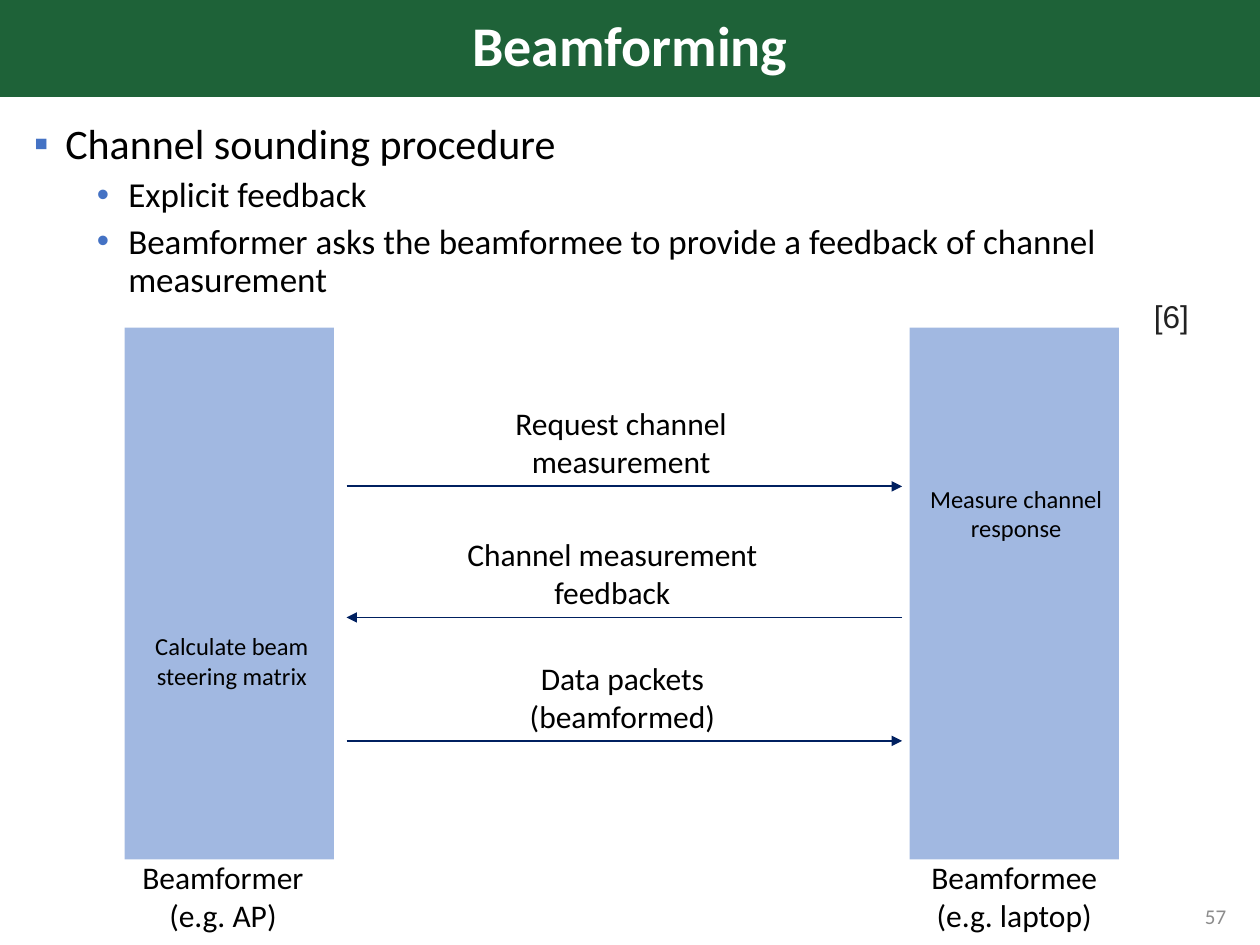
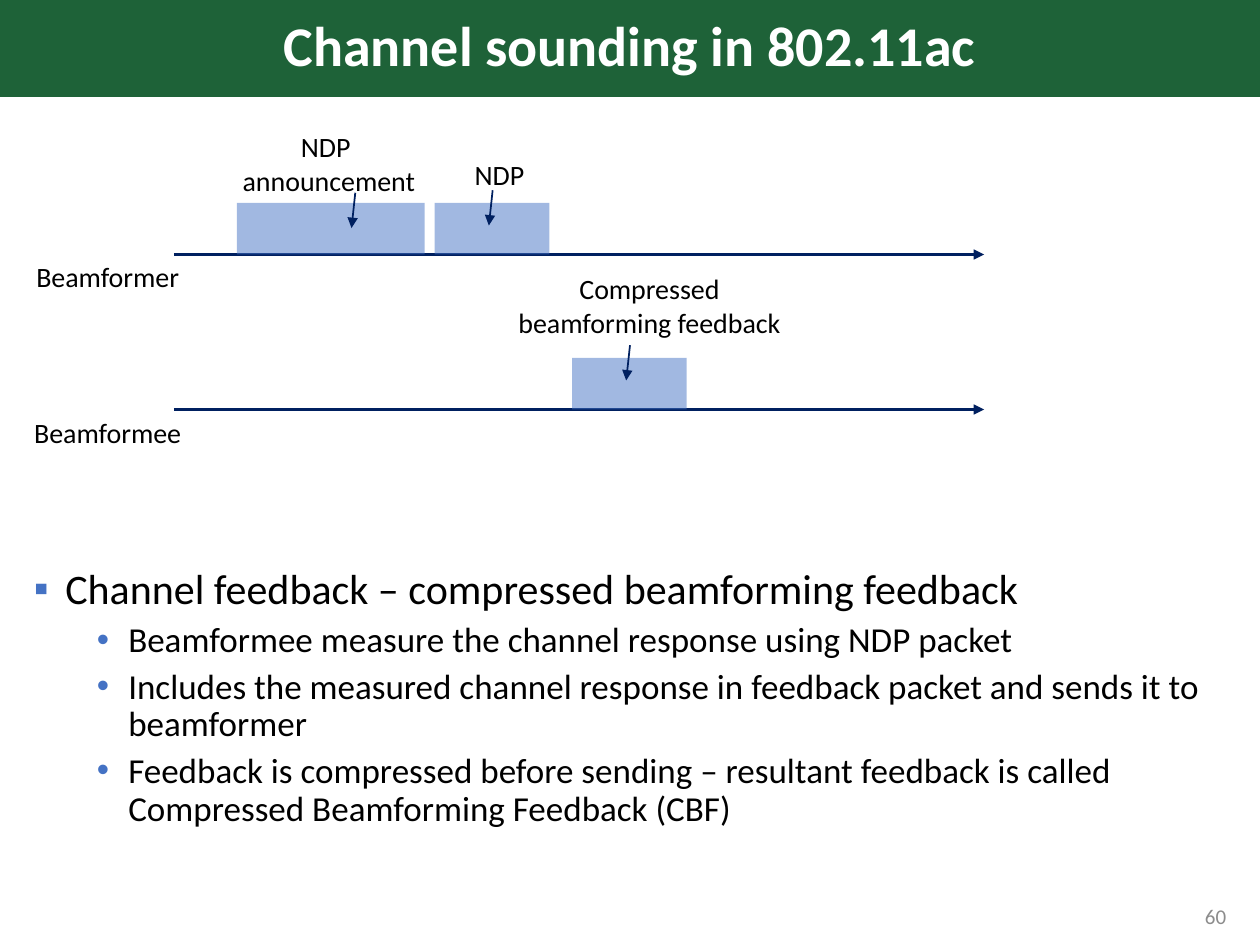
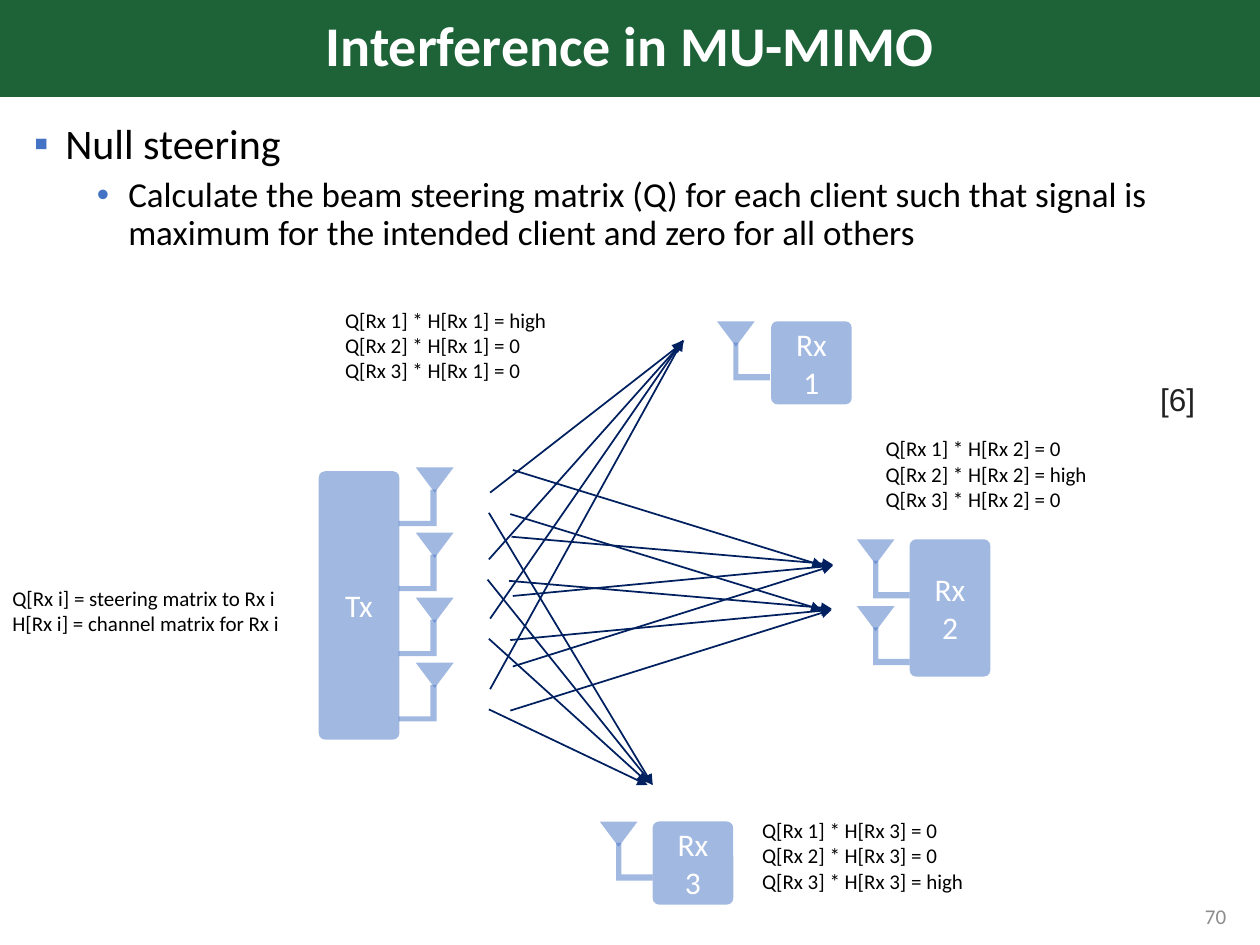
from lxml import etree
from pptx import Presentation
from pptx.dml.color import RGBColor
from pptx.enum.shapes import MSO_CONNECTOR, MSO_SHAPE
from pptx.enum.text import MSO_ANCHOR, PP_ALIGN
from pptx.oxml.ns import qn
from pptx.util import Inches, Pt

RECT = MSO_SHAPE.RECTANGLE
ROUND = MSO_SHAPE.ROUNDED_RECTANGLE
CORNER = MSO_SHAPE.CORNER
CONE = MSO_SHAPE.ISOSCELES_TRIANGLE
LINE = MSO_CONNECTOR.STRAIGHT
LEFT, CENTER, RIGHT = PP_ALIGN.LEFT, PP_ALIGN.CENTER, PP_ALIGN.RIGHT
TOP, MIDDLE = MSO_ANCHOR.TOP, MSO_ANCHOR.MIDDLE

GREEN, BLUE, NAVY = "1E6238", "4472C4", "002060"
BLACK, WHITE, GRAY, DARK = "000000", "FFFFFF", "8C8C8C", "222222"


def color(code):
    return RGBColor.from_string(code)


def add(parent, tag, **attrs):
    return etree.SubElement(parent, qn(tag), attrs)


def write(frame, text, size=18, ink=BLACK, font="Calibri", bold=False,
          align=CENTER, anchor=TOP, spacing=None):
    """Fill a text frame, one paragraph for each line of text."""
    frame.word_wrap = True
    frame.vertical_anchor = anchor
    for i, line in enumerate(text.split("\n")):
        para = frame.paragraphs[0] if i == 0 else frame.add_paragraph()
        para.alignment = align
        para.line_spacing = spacing
        run = para.add_run()
        run.text = line
        run.font.size = Pt(size)
        run.font.name = font
        run.font.bold = bold
        run.font.color.rgb = color(ink)


def bullet(para, mark, indent):
    props = para._p.get_or_add_pPr()
    props.set("marL", str(Inches(indent)))
    props.set("indent", str(Inches(-0.25)))
    add(add(props, "a:buClr"), "a:srgbClr", val=BLUE)
    add(props, "a:buFont", typeface="Arial")
    add(props, "a:buChar", char=mark)


class Deck:
    """Holds the shared style and the slide being built."""

    def __init__(self):
        self.prs = Presentation()
        self.prs.slide_width = Inches(10)
        self.prs.slide_height = Inches(7.5)
        self.slide = None

    def start(self, title, number):
        self.slide = self.prs.slides.add_slide(self.prs.slide_layouts[6])
        band = self.shape(RECT, 0, 0, 10, 0.77, fill=GREEN, alpha=None)
        write(band.text_frame, title, size=32, ink=WHITE, bold=True,
              anchor=MIDDLE, spacing=0.9)
        self.text(number, 7.58, 7.07, 2.25, 0.4, size=12, ink=GRAY,
                  align=RIGHT, anchor=MIDDLE)

    def shape(self, kind, x, y, w, h, fill=BLUE, alpha=50, adjust=(), turn=0):
        item = self.slide.shapes.add_shape(
            kind, Inches(x), Inches(y), Inches(w), Inches(h))
        item.shadow.inherit = False
        item.line.fill.background()
        item.fill.solid()
        item.fill.fore_color.rgb = color(fill)
        if alpha:
            tint = item._element.spPr.find(qn("a:solidFill"))[0]
            add(tint, "a:alpha", val=str(alpha * 1000))
        for i, value in enumerate(adjust):
            item.adjustments[i] = value
        item.rotation = turn
        return item

    def text(self, text, x, y, w, h, **style):
        box = self.slide.shapes.add_textbox(
            Inches(x), Inches(y), Inches(w), Inches(h))
        write(box.text_frame, text, **style)
        return box.text_frame

    def body(self, head, points, top=0.93):
        frame = self.text("\n".join([head, *points]), 0.17, top, 9.66,
                          7.34 - top, size=20, align=LEFT, spacing=0.9)
        first, *rest = frame.paragraphs
        first.space_before = Pt(10)
        first.runs[0].font.size = Pt(24)
        bullet(first, "▪", 0.25)
        for para in rest:
            para.level = 1
            para.space_before = Pt(5)
            bullet(para, "•", 0.75)

    def arrow(self, x1, y1, x2, y2, width=1):
        line = self.slide.shapes.add_connector(
            LINE, Inches(x1), Inches(y1), Inches(x2), Inches(y2))
        line.line.color.rgb = color(NAVY)
        line.line.width = Pt(width)
        add(line.line._get_or_add_ln(), "a:tailEnd", type="triangle")
        add(line._element.spPr, "a:effectLst")

    def cite(self, x, y):
        self.text("[6]", x, y, 0.55, 0.4, font="Arial", ink=DARK, align=LEFT)

    def device(self, label, x, y, h):
        box = self.shape(ROUND, x, y, 0.64, h, adjust=[0.08])
        write(box.text_frame, label, ink=WHITE, anchor=MIDDLE)

    def antenna(self, x, y, sends=False):
        """Draw a cone and its feed, which leads left on a sender."""
        side, turn = (-0.13, 270) if sends else (0.13, 0)
        self.shape(CORNER, x + side, y + 0.17, 0.29, 0.3,
                   adjust=[0.17, 0.14], turn=turn)
        self.shape(CONE, x, y, 0.3, 0.2, turn=180)


def feedback(deck):
    deck.start("Beamforming", "57")
    deck.body("Channel sounding procedure", [
        "Explicit feedback",
        "Beamformer asks the beamformee to provide a feedback of channel "
        "measurement"])
    near, far = 2.75, 7.16
    for label, x, y, w, ends in [
            ("Request channel measurement", 3.88, 3.86, 2.1, (near, far)),
            ("Channel measurement feedback", 3.55, 4.9, 2.62, (far, near)),
            ("Data packets (beamformed)", 3.89, 5.88, 2.1, (near, far))]:
        deck.text(label, x, y - 0.7, w, 0.71)
        deck.arrow(ends[0], y, ends[1], y)
    for x in (0.99, 7.22):
        deck.shape(RECT, x, 2.6, 1.66, 4.22)
    deck.text("Calculate beam steering matrix", 1.1, 4.96, 1.48, 0.57, size=14)
    deck.text("Measure channel response", 7.24, 3.79, 1.65, 0.57, size=14)
    deck.text("Beamformer (e.g. AP)", 0.89, 6.76, 1.76, 0.71)
    deck.text("Beamformee\n(e.g. laptop)", 7.22, 6.76, 1.66, 0.71)
    deck.cite(9.06, 2.31)


def sounding(deck):
    deck.start("Channel sounding in 802.11ac", "60")
    deck.body("Channel feedback – compressed beamforming feedback", [
        "Beamformee measure the channel response using NDP packet",
        "Includes the measured channel response in feedback packet and sends "
        "it to beamformer",
        "Feedback is compressed before sending – resultant feedback is called "
        "Compressed Beamforming Feedback (CBF)"], top=4.46)
    for name, axis, top in [("Beamformer", 2.02, 2.01),
                            ("Beamformee", 3.25, 3.25)]:
        deck.arrow(1.38, axis, 7.81, axis, width=1.5)
        deck.text(name, 0.08, top, 1.55, 0.37, size=16)
    for x, y, w in [(1.88, 1.61, 1.49), (3.45, 1.61, 0.91), (4.54, 2.84, 0.91)]:
        deck.shape(RECT, x, y, w, 0.41)
    for label, x, y, w, h in [
            ("NDP \nannouncement", 1.82, 0.98, 1.58, 0.64),
            ("NDP", 3.6, 1.2, 0.73, 0.37),
            ("Compressed beamforming feedback", 3.91, 2.11, 2.49, 0.64)]:
        deck.text(label, x, y, w, h, size=16)
    for x, y in [(2.82, 1.53), (3.91, 1.51), (5, 2.74)]:
        deck.arrow(x, y, x - 0.03, y + 0.28)


def steering(deck):
    deck.start("Interference in MU-MIMO", "70")
    deck.body("Null steering", [
        "Calculate the beam steering matrix (Q) for each client such that "
        "signal is maximum for the intended client and zero for all others"])

    for label, x, y, h in [("Tx", 2.53, 3.74, 2.13), ("Rx 1", 6.12, 2.55, 0.66),
                           ("Rx 2", 7.22, 4.28, 1.09),
                           ("Rx 3", 5.18, 6.52, 0.66)]:
        deck.device(label, x, y, h)
    for i in range(4):
        deck.antenna(3.3, 3.71 + i * 1.55 / 3, sends=True)
    for x, y in [(5.69, 2.55), (6.8, 4.28), (6.8, 4.81), (4.76, 6.52)]:
        deck.antenna(x, y)

    # Each fan has one beam from every sending antenna.
    offsets = [(0, 0), (-0.01, 0.53), (0, 1), (0, 1.56)]
    for x, y, ends in [
            (3.89, 3.91, [(5.42, 2.72), (5.43, 2.7), (5.42, 2.7), (5.42, 2.7)]),
            (4.05, 4.08, [(6.52, 4.84), (6.6, 4.83), (6.6, 4.84), (6.6, 4.84)]),
            (4.07, 3.73, [(6.53, 4.49), (6.61, 4.48), (6.61, 4.49),
                          (6.61, 4.49)]),
            (3.88, 4.07, [(5.18, 6.23), (5.18, 6.23), (5.14, 6.21),
                          (5.14, 6.23)])]:
        for (dx, dy), end in zip(offsets, ends):
            deck.arrow(x + dx, y + dy, *end)

    for rx, (x, y) in enumerate([(2.64, 2.39), (6.93, 3.41), (5.95, 6.44)], 1):
        gains = [f"Q[Rx {q}] * H[Rx {rx}] = {'high' if q == rx else 0}"
                 for q in (1, 2, 3)]
        deck.text("\n".join(gains), x, y, 2.5, 0.71, size=12, align=LEFT)
    deck.text("Q[Rx i] = steering matrix to Rx i\n"
              "H[Rx i] = channel matrix for Rx i",
              0, 4.6, 2.5, 0.5, size=12, align=LEFT)
    deck.cite(9.11, 2.97)


def main():
    deck = Deck()
    feedback(deck)
    sounding(deck)
    steering(deck)
    deck.prs.save("out.pptx")


if __name__ == "__main__":
    main()
